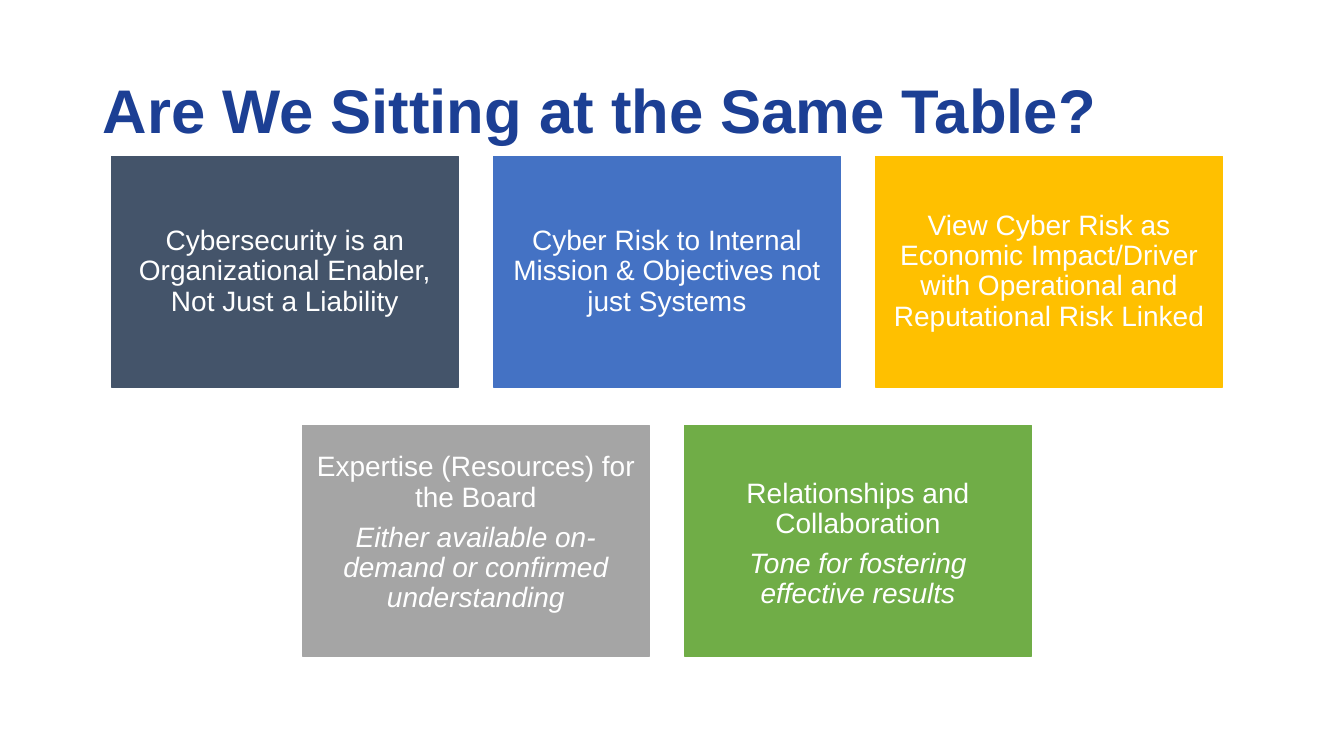
from dataclasses import dataclass

from pptx import Presentation
from pptx import util as u
from pptx.dml.color import RGBColor
from pptx.enum import shapes, text


@dataclass(frozen=True)
class Theme:
    font: str = "Arial"
    title_size: int = 44
    card_size: int = 20
    title: str = "1C3F94"
    card_text: str = "FFFFFF"
    slate: str = "44546A"
    blue: str = "4472C4"
    gold: str = "FFC000"
    gray: str = "A5A5A5"
    green: str = "70AD47"


@dataclass(frozen=True)
class Box:
    left: float
    top: float
    width: float
    height: float

    def lengths(self):
        return [u.Inches(n) for n in (self.left, self.top, self.width, self.height)]


@dataclass(frozen=True)
class Card:
    fill: str
    heading: str
    detail: str = ""
    text_top: float = 0  # distance to the text; 0 centres it vertically


THEME = Theme()
CARD_WIDTH, CARD_HEIGHT = 3.44, 2.29
CARD_PITCH, ROW_PITCH = 3.79, 2.67
CARD_INSET = 0.09

CARD_ROWS = [
    [
        Card(THEME.slate, "Cybersecurity is an Organizational Enabler, Not Just a Liability"),
        Card(THEME.blue, "Cyber Risk to Internal Mission & Objectives not just Systems"),
        Card(THEME.gold, "View Cyber Risk as Economic Impact/Driver with "
                         "Operational and Reputational Risk Linked"),
    ],
    [
        Card(THEME.gray, "Expertise (Resources) for the Board",
             "Either available on-demand or confirmed understanding", text_top=0.27),
        Card(THEME.green, "Relationships and Collaboration",
             "Tone for fostering effective results", text_top=0.53),
    ],
]


def write(para, words, size, color, bold=False, italic=False, align=None, after=0):
    """Put formatted text into a paragraph."""
    para.alignment = align
    para.line_spacing = 0.9
    para.space_after = u.Pt(after)
    span = para.add_run()
    span.text = words
    span.font.name = THEME.font
    span.font.size = u.Pt(size)
    span.font.bold = bold
    span.font.italic = italic
    span.font.color.rgb = RGBColor.from_string(color)


def add_title(page, box, words):
    frame = page.shapes.add_textbox(*box.lengths()).text_frame
    frame.word_wrap = True
    frame.vertical_anchor = text.MSO_ANCHOR.MIDDLE
    write(frame.paragraphs[0], words, THEME.title_size, THEME.title, bold=True)


def add_card(page, box, card):
    shape = page.shapes.add_shape(shapes.MSO_SHAPE.RECTANGLE, *box.lengths())
    shape.shadow.inherit = False
    color = RGBColor.from_string(card.fill)
    shape.fill.solid()
    shape.fill.fore_color.rgb = color
    shape.line.color.rgb = color
    shape.line.width = u.Pt(1)

    frame = shape.text_frame
    frame.word_wrap = True
    frame.margin_left = frame.margin_right = frame.margin_bottom = u.Inches(CARD_INSET)
    frame.margin_top = u.Inches(card.text_top or CARD_INSET)
    frame.vertical_anchor = text.MSO_ANCHOR.TOP if card.text_top else text.MSO_ANCHOR.MIDDLE

    # Heading, with an optional italic detail below
    center = text.PP_ALIGN.CENTER
    write(frame.paragraphs[0], card.heading, THEME.card_size, THEME.card_text,
          align=center, after=7)
    if card.detail:
        write(frame.add_paragraph(), card.detail, THEME.card_size, THEME.card_text,
              italic=True, align=center, after=3)


def add_card_rows(page, box, rows):
    """Centre each row of cards across the box."""
    for row_index, row in enumerate(rows):
        row_width = (len(row) - 1) * CARD_PITCH + CARD_WIDTH
        left = box.left + (box.width - row_width) / 2
        top = box.top + row_index * ROW_PITCH
        for column, card in enumerate(row):
            card_box = Box(left + column * CARD_PITCH, top, CARD_WIDTH, CARD_HEIGHT)
            add_card(page, card_box, card)


def main():
    deck = Presentation()
    deck.slide_width, deck.slide_height = u.Inches(13.33), u.Inches(7.5)
    page = deck.slides.add_slide(deck.slide_layouts[6])
    add_title(page, Box(0.92, 0.4, 11.5, 1.45), "Are We Sitting at the Same Table?")
    add_card_rows(page, Box(1.1, 1.55, 11.03, 4.96), CARD_ROWS)
    deck.save("out.pptx")


if __name__ == "__main__":
    main()
